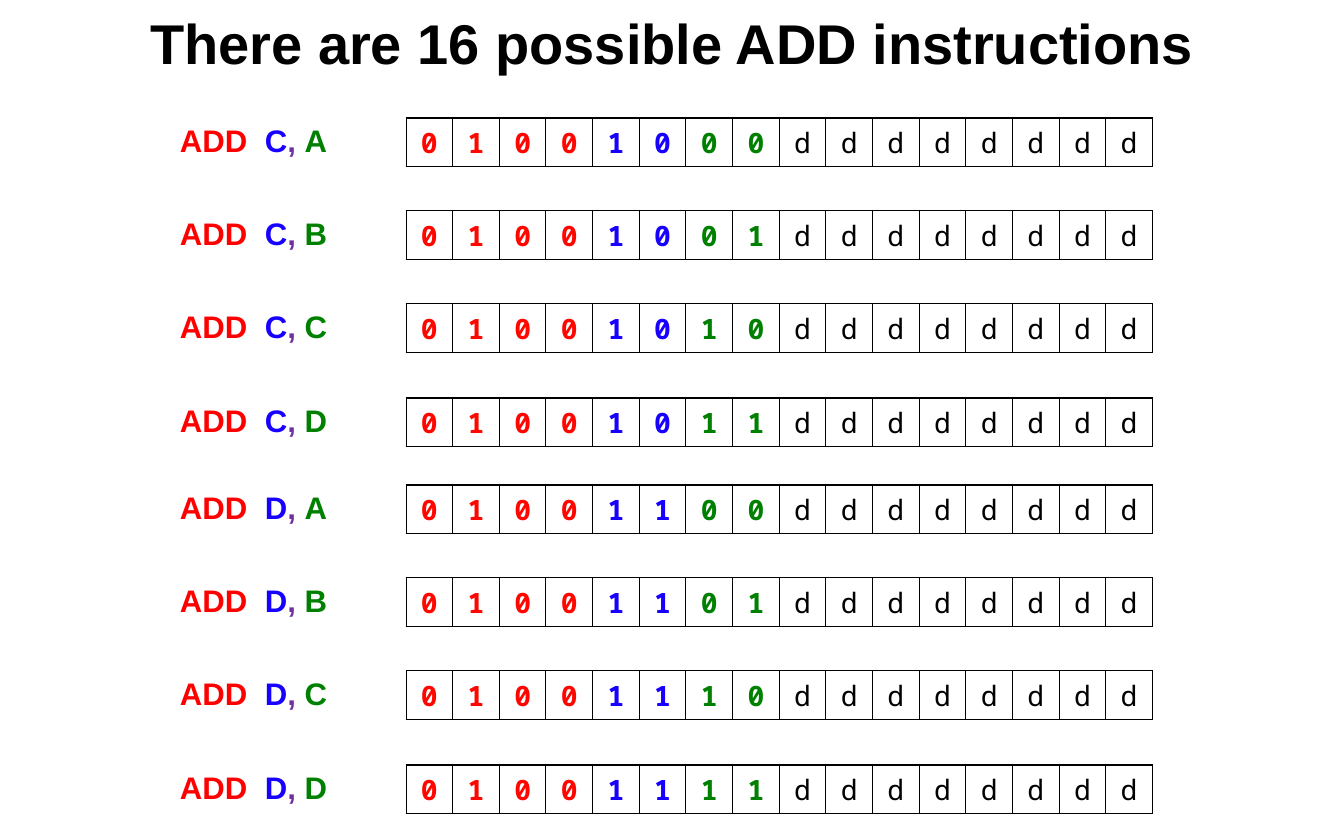
from itertools import product

from lxml import etree
from pptx import Presentation
from pptx.dml.color import RGBColor
from pptx.enum.text import MSO_ANCHOR, PP_ALIGN
from pptx.oxml.ns import qn
from pptx.util import Pt

CENTER, LEFT = PP_ALIGN.CENTER, PP_ALIGN.LEFT
TOP, MIDDLE = MSO_ANCHOR.TOP, MSO_ANCHOR.MIDDLE

BLACK = RGBColor(0x00, 0x00, 0x00)
RED = RGBColor(0xFF, 0x00, 0x00)
OPRED = RGBColor(0xFF, 0x07, 0x00)
BLUE = RGBColor(0x17, 0x00, 0xFF)
GREEN = RGBColor(0x00, 0x80, 0x00)
PURPLE = RGBColor(0x70, 0x30, 0xA0)

SANS, MONO = "Arial", "Noto Sans Mono"
INSET = 11
CODES = {"A": "00", "B": "01", "C": "10", "D": "11"}


def px(n):
    return round(n * 914400 / 112)


def write(para, text, size=20, font=SANS, color=BLACK, bold=True):
    run = para.add_run()
    run.text = text
    run.font.size = Pt(size)
    run.font.name = font
    run.font.bold = bold
    run.font.color.rgb = color


def text_box(slide, box, align=LEFT, anchor=TOP, before=0):
    frame = slide.shapes.add_textbox(*map(px, box)).text_frame
    frame.word_wrap = True
    frame.vertical_anchor = anchor
    frame.margin_left = frame.margin_right = px(INSET)
    frame.margin_top = frame.margin_bottom = px(INSET)
    para = frame.paragraphs[0]
    para.alignment = align
    para.space_before = Pt(before)
    return para


def add_title(slide, box):
    para = text_box(slide, box, align=CENTER, before=4.6)
    write(para, "There are 16 possible ADD instructions", size=36)


def add_label(slide, box, dest, src):
    para = text_box(slide, box, anchor=MIDDLE, before=4.8)
    props = para._p.get_or_add_pPr()
    props.set("marL", str(px(19)))
    props.set("indent", "0")
    for text, color in (("ADD  ", RED), (dest, BLUE), (", ", PURPLE), (src, GREEN)):
        write(para, text, color=color)


def add_border(cell):
    props = cell._tc.get_or_add_tcPr()
    for i, side in enumerate(("a:lnL", "a:lnR", "a:lnT", "a:lnB")):
        line = etree.Element(qn(side), w=str(Pt(0.75)))
        fill = etree.SubElement(line, qn("a:solidFill"))
        etree.SubElement(fill, qn("a:srgbClr"), val=str(BLACK))
        props.insert(i, line)


def add_word(slide, box, dest, src):
    # Opcode, destination, source, then eight unused bits
    fields = (("0100", OPRED), (CODES[dest], BLUE), (CODES[src], GREEN), ("d" * 8, BLACK))
    bits = [(bit, color) for text, color in fields for bit in text]
    table = slide.shapes.add_table(1, len(bits), *map(px, box)).table
    table.first_row = table.horz_banding = False
    for cell, (bit, color) in zip(table.iter_cells(), bits):
        cell.fill.background()
        add_border(cell)
        para = cell.text_frame.paragraphs[0]
        para.alignment = CENTER
        write(para, bit, size=18, font=MONO, color=color, bold=bit != "d")


def add_row(slide, box, dest, src):
    x, y, w, h = box
    add_word(slide, (x + 256, y + 6, w - 256, h - 7), dest, src)
    add_label(slide, (x, y, 206, h), dest, src)


def add_rows(slide, box):
    x, y, w, h = box
    # Two groups of four rows, one for each destination
    for (i, dest), (j, src) in product(enumerate("CD"), enumerate("ABCD")):
        top = y + 367 * i + 280 * j // 3
        add_row(slide, (x, top, w, h), dest, src)


def main():
    deck = Presentation()
    deck.slide_width, deck.slide_height = px(1344), px(840)
    slide = deck.slides.add_slide(deck.slide_layouts[6])
    add_title(slide, (112, -2, 1120, 84))
    add_rows(slide, (150, 112, 1003, 56))
    deck.save("out.pptx")


if __name__ == "__main__":
    main()
